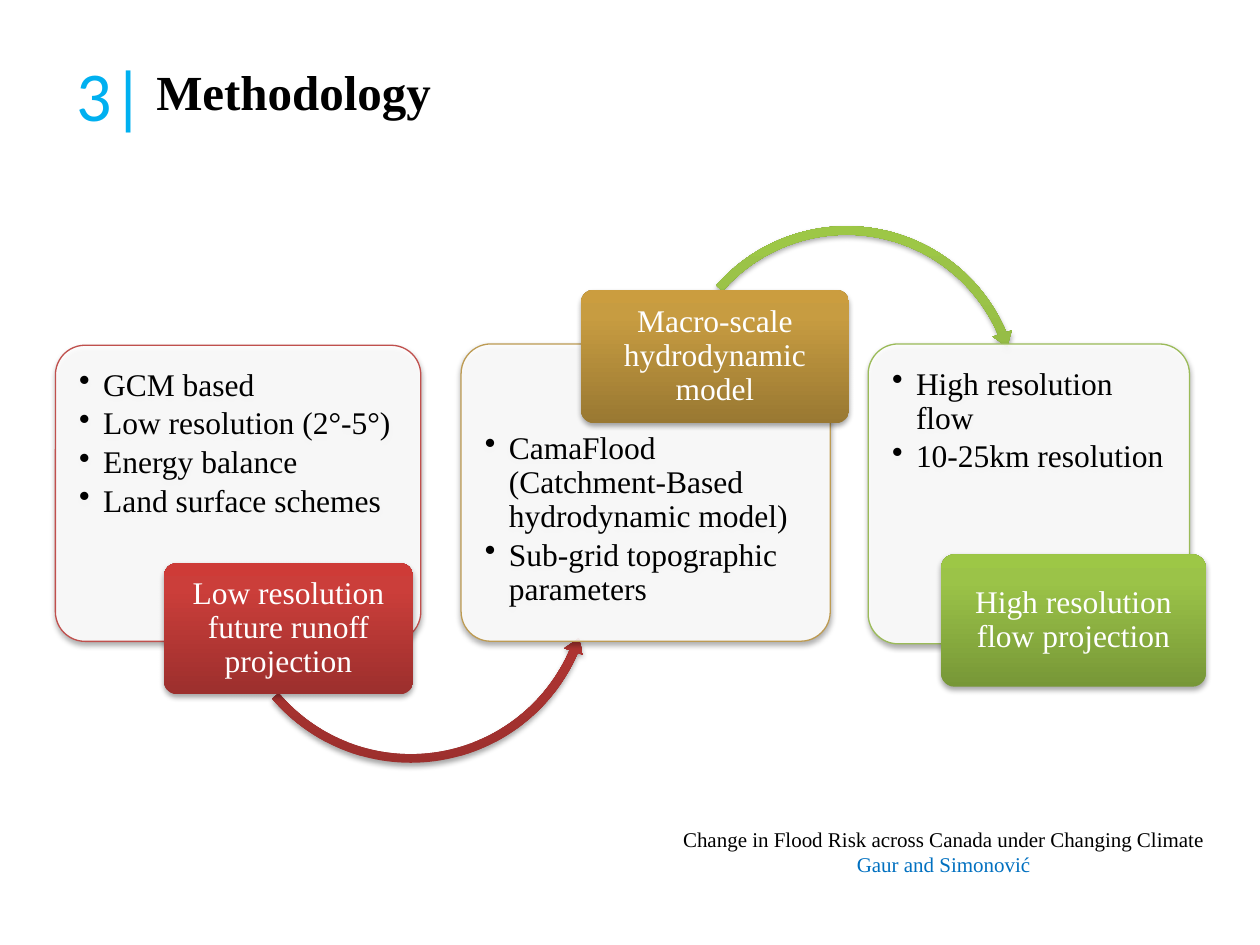
from copy import deepcopy
from dataclasses import dataclass

from pptx import Presentation
from pptx.dml.color import RGBColor
from pptx.enum.shapes import MSO_SHAPE
from pptx.enum.text import MSO_ANCHOR, PP_ALIGN
from pptx.oxml import parse_xml
from pptx.oxml.ns import nsdecls, qn
from pptx.util import Inches, Pt


@dataclass(frozen=True)
class Theme:
    serif: str = "Times New Roman"
    sans: str = "Calibri"
    ink: str = "000000"
    paper: str = "FFFFFF"
    cyan: str = "00B0F0"
    blue: str = "0070C0"
    lines: tuple = ("C0504D", "BD9B53", "9BBB59")
    red: tuple = ("9C2F2D", "CB3E3A", "CE3B37")
    gold: tuple = ("997832", "C79C41", "CB9D3F")
    green: tuple = ("779737", "9BC348", "9DC746")
    title: int = 28
    number: int = 40
    body: int = 18
    foot: int = 12


theme = Theme()
SHADOW = (
    f'<a:effectLst {nsdecls("a")}><a:outerShdw blurRad="40000" dist="23000" '
    'dir="5400000" rotWithShape="0"><a:srgbClr val="000000">'
    '<a:alpha val="35000"/></a:srgbClr></a:outerShdw></a:effectLst>'
)


def write(para, text, size, color, face=theme.serif, bold=False):
    run = para.add_run()
    run.text = text
    font = run.font
    font.name, font.size, font.bold = face, Pt(size), bold
    font.color.rgb = RGBColor.from_string(color)


def draw(kind, box, adjust, colors):
    """Add a shadowed shape; three colours make a vertical gradient."""
    shape = slide.shapes.add_shape(kind, *map(Inches, box))
    for i, value in enumerate(adjust):
        shape.adjustments[i] = value
    props = shape._element.spPr
    if len(colors) == 3:
        shape.fill.gradient()
        shape.fill.gradient_angle = 90
        stops = props.find(".//" + qn("a:gsLst"))
        stops.append(deepcopy(stops[-1]))
        for stop, color, place in zip(shape.fill.gradient_stops, colors, (0, 0.8, 1)):
            stop.color.rgb = RGBColor.from_string(color)
            stop.position = place
    else:
        shape.fill.solid()
        shape.fill.fore_color.rgb = RGBColor.from_string(colors[0])
        tint = props.find(".//" + qn("a:srgbClr"))
        tint.append(parse_xml(f'<a:alpha {nsdecls("a")} val="90000"/>'))
    shape.line.fill.background()
    props.append(parse_xml(SHADOW))
    return shape


deck = Presentation()
deck.slide_width, deck.slide_height = Inches(10), Inches(7.5)
slide = deck.slides.add_slide(deck.slide_layouts[5])

# Heading
title = slide.shapes.title
title.left, title.top = Inches(1.14), Inches(0.44)
title.width, title.height = Inches(3.31), Inches(1.04)
title.text_frame.vertical_anchor = MSO_ANCHOR.TOP
para = title.text_frame.paragraphs[0]
para.alignment = PP_ALIGN.LEFT
write(para, "Methodology", theme.title, theme.ink, bold=True)

number = slide.shapes.add_textbox(Inches(0.51), Inches(0.36), Inches(0.74), Inches(0.77))
number.text_frame.word_wrap = False
write(number.text_frame.paragraphs[0], "3|", theme.number, theme.cyan, theme.sans)

# Footer
foot = slide.shapes.add_textbox(Inches(5.24), Inches(6.51), Inches(4.5), Inches(0.5))
frame = foot.text_frame
frame.word_wrap = True
write(frame.paragraphs[0], "Change in Flood Risk across Canada under Changing Climate",
      theme.foot, theme.ink)
write(frame.add_paragraph(), "Gaur and Simonović", theme.foot, theme.blue)
for para in frame.paragraphs:
    para.alignment = PP_ALIGN.CENTER

# Steps: card box, top inset, bullets, label box, label, gradient, arrow to next step
steps = [
    ((0.44, 2.74, 2.9, 2.35), 0.12,
     ["GCM based", "Low resolution (2°-5°)", "Energy balance", "Land surface schemes"],
     (1.3, 4.47, 1.98, 1.04), "Low resolution future runoff projection", theme.red,
     (MSO_SHAPE.LEFT_CIRCULAR_ARROW, (1.77, 3.12, 2.98, 2.98),
      (0.023, 2.776, 14.079, 83.793, 0.027))),
    ((3.66, 2.73, 2.93, 2.36), 0.63,
     ["CamaFlood (Catchment-Based hydrodynamic model)",
      "Sub-grid topographic parameters"],
     (4.61, 2.3, 2.13, 1.06), "Macro-scale hydrodynamic model", theme.gold,
     (MSO_SHAPE.CIRCULAR_ARROW, (5.3, 1.75, 2.84, 2.84),
      (0.024, 2.919, 202.236, 132.665, 0.028))),
    ((6.89, 2.73, 2.55, 2.38), 0.12,
     ["High resolution flow", "10-25km resolution"],
     (7.47, 4.4, 2.1, 1.05), "High resolution flow projection", theme.green, None),
]
arrows = (theme.red, theme.green)

for i, (box, inset, points, spot, name, shades, arrow) in enumerate(steps):
    card = draw(MSO_SHAPE.ROUNDED_RECTANGLE, box, [0.1], [theme.paper])
    card.line.color.rgb = RGBColor.from_string(theme.lines[i])
    card.line.width = Pt(0.75)
    frame = card.text_frame
    frame.word_wrap = True
    frame.vertical_anchor = MSO_ANCHOR.TOP
    frame.margin_left = frame.margin_right = frame.margin_bottom = Inches(0.12)
    frame.margin_top = Inches(inset)
    for j, point in enumerate(points):
        para = frame.add_paragraph() if j else frame.paragraphs[0]
        para.alignment = PP_ALIGN.LEFT
        para.level = 1
        para.line_spacing = 0.9
        para.space_after = Pt(2.7)
        props = para._p.get_or_add_pPr()
        props.set("marL", str(Inches(0.19)))
        props.set("indent", str(Inches(-0.19)))
        props.append(parse_xml(f'<a:buChar {nsdecls("a")} char="•"/>'))
        write(para, point, theme.body, theme.ink)

    if arrow:
        draw(*arrow, arrows[i])

    label = draw(MSO_SHAPE.ROUNDED_RECTANGLE, spot, [0.1], shades)
    frame = label.text_frame
    frame.word_wrap = True
    frame.vertical_anchor = MSO_ANCHOR.MIDDLE
    frame.margin_left = frame.margin_right = Inches(0.04)
    frame.margin_top = frame.margin_bottom = Inches(0.03)
    para = frame.paragraphs[0]
    para.alignment = PP_ALIGN.CENTER
    para.line_spacing = 0.9
    write(para, name, theme.body, theme.paper)

deck.save("out.pptx")
